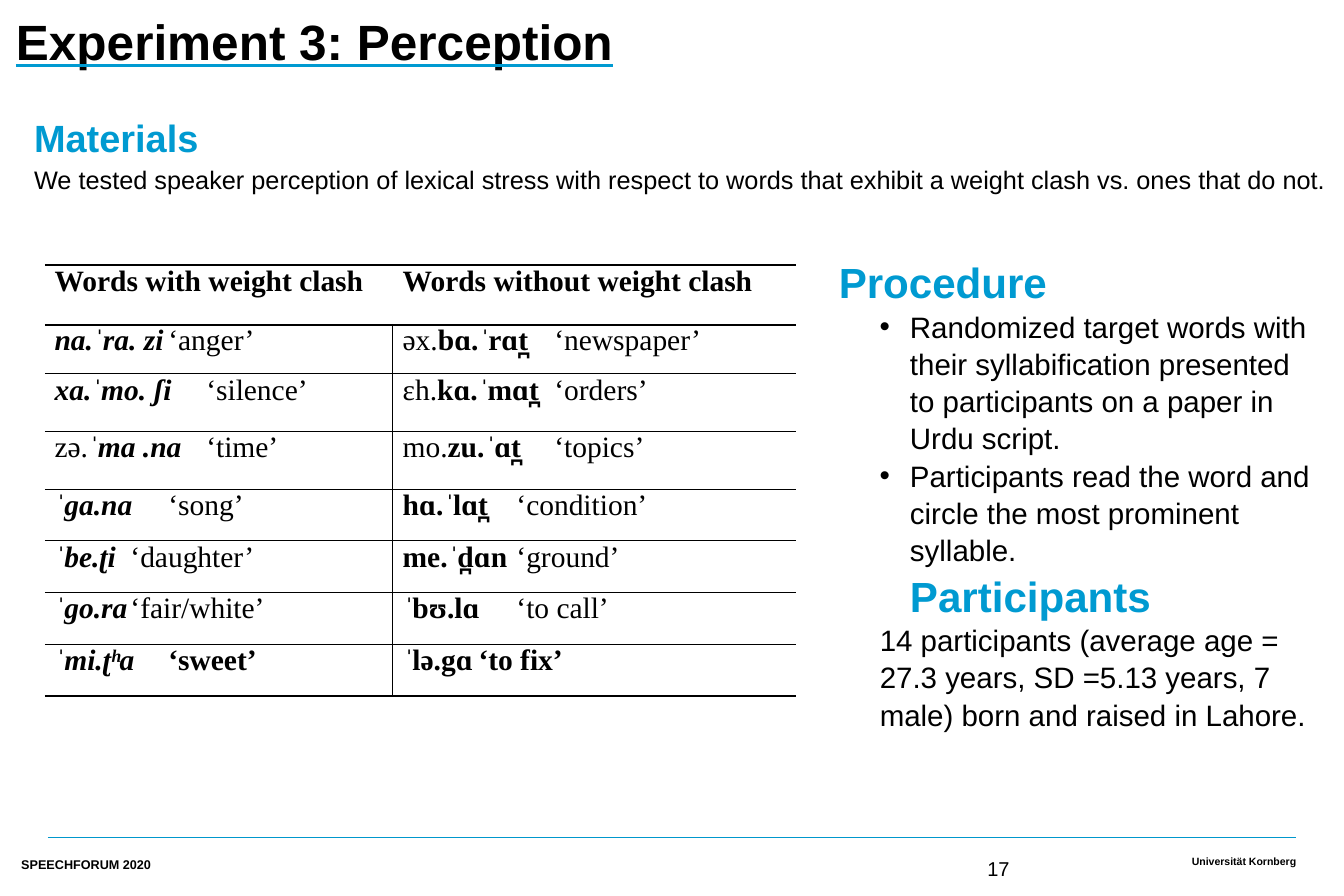
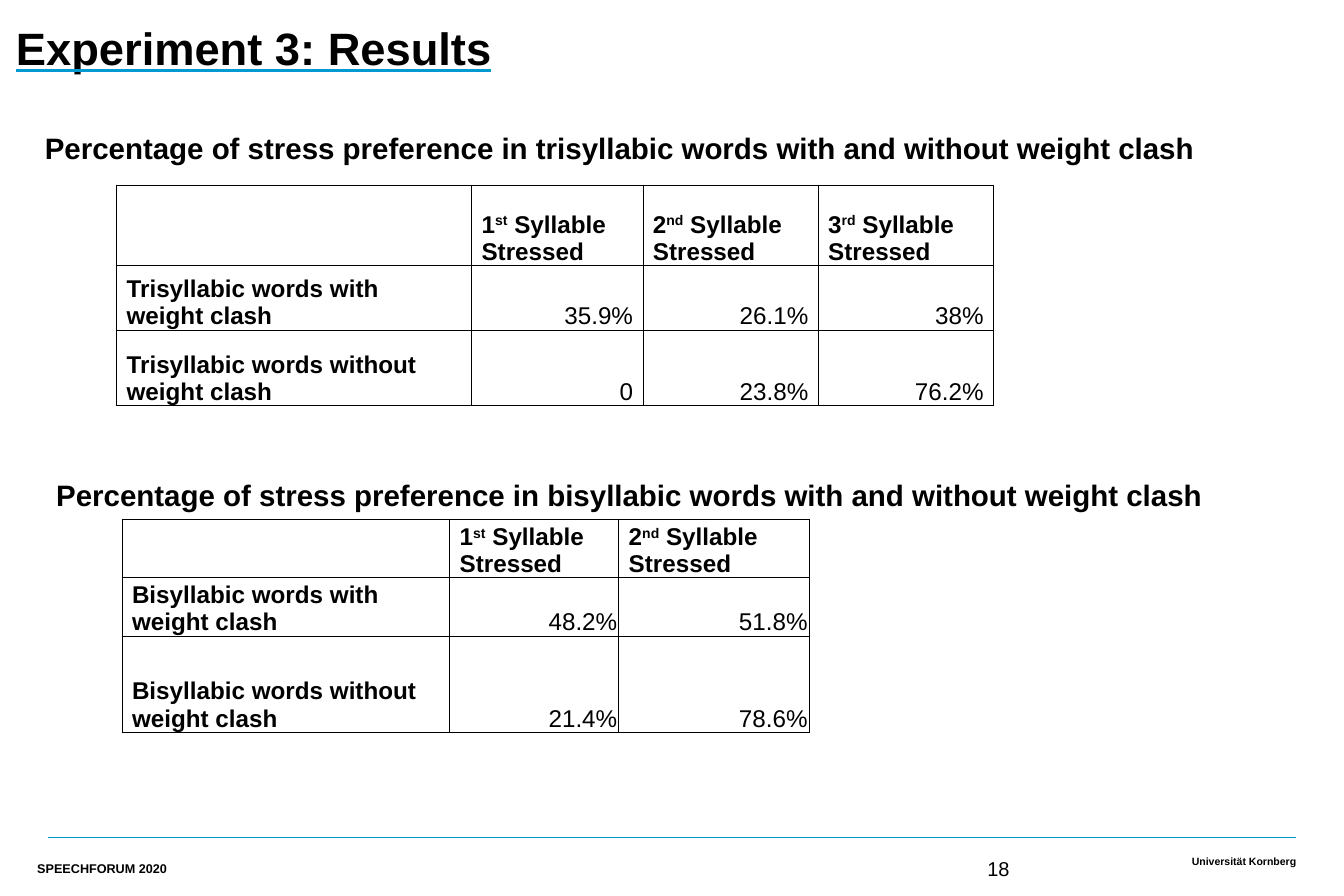
"""Build the perception experiment slides: materials and results."""
from dataclasses import dataclass

from lxml import etree
from pptx import Presentation
from pptx.dml.color import RGBColor
from pptx.enum.shapes import MSO_CONNECTOR
from pptx.enum.text import MSO_ANCHOR, PP_ALIGN
from pptx.oxml.ns import qn
from pptx.util import Inches, Pt

STRAIGHT = MSO_CONNECTOR.STRAIGHT
TOP, BOTTOM = MSO_ANCHOR.TOP, MSO_ANCHOR.BOTTOM
LEFT, RIGHT, JUSTIFY = PP_ALIGN.LEFT, PP_ALIGN.RIGHT, PP_ALIGN.JUSTIFY
BLACK = RGBColor(0x00, 0x00, 0x00)
WHITE = RGBColor(0xFF, 0xFF, 0xFF)
BLUE = RGBColor(0x00, 0x9A, 0xD1)
RULE_BLUE = RGBColor(0x00, 0x97, 0xCC)
SANS, SERIF = "Arial", "Times New Roman"
SLIDE_WIDTH, SLIDE_HEIGHT = Inches(17.72), Inches(11.81)
CELL_MARGIN = 0.13
STRESS = "ˈ"


@dataclass(frozen=True)
class Box:
    """Place on a grid of 100 columns by 100 rows."""
    left: float
    top: float
    width: float
    height: float


@dataclass(frozen=True)
class Run:
    """Stretch of text in one style."""
    text: str
    size: float
    bold: bool = False
    italic: bool = False
    color: RGBColor = BLACK
    font: str = SANS
    raised: bool = False
    underlined: bool = False


@dataclass(frozen=True)
class Paragraph:
    """Runs with their alignment, spacing and indents in grid columns."""
    runs: tuple[Run, ...]
    align: PP_ALIGN = LEFT
    spacing: float = 1.0
    before: float = 0
    indent: float = 0
    hanging: float = 0
    tab: float = 0


@dataclass(frozen=True)
class Cell:
    """Table cell with border widths in points for left, right, top and bottom."""
    paragraph: Paragraph | None
    borders: tuple[float, float, float, float]
    anchor: MSO_ANCHOR = BOTTOM
    margin: float = CELL_MARGIN


@dataclass(frozen=True)
class Word:
    """Transcribed word: unmarked beginning, marked rest and meaning."""
    beginning: str
    marked: str
    meaning: str


@dataclass(frozen=True)
class Results:
    """Stress preferences of one word length, with the table's grid."""
    heading: str
    heading_box: Box
    left: float
    top: float
    columns: tuple[float, ...]
    rows: tuple[float, ...]
    length: str
    values: tuple[tuple[str, ...], ...]
    value_margin: float


CLASH = (
    Word("", "nɑ.ˈrɑ. zi", "‘anger’"), Word("", "xɑ.ˈmo. ʃi", "‘silence’"),
    Word("zə.", "ˈmɑ .nɑ", "‘time’"), Word("", "ˈgɑ.nɑ", "‘song’"),
    Word("", "ˈbe.ʈi", "‘daughter’"), Word("", "ˈgo.rɑ", "‘fair/white’"),
    Word("", "ˈmi.ʈʰɑ", "‘sweet’"),
)
NO_CLASH = (
    Word("əx.", "bɑ.ˈrɑt̪", "‘newspaper’"), Word("ɛh.", "kɑ.ˈmɑt̪", "‘orders’"),
    Word("mo.", "zu.ˈɑt̪", "‘topics’"), Word("", "hɑ.ˈlɑt̪", "‘condition’"),
    Word("", "me.ˈd̪ɑn", "‘ground’"), Word("", "ˈbʊ.lɑ", "‘to call’"),
    Word("", "ˈlə.gɑ", "‘to fix’"),
)
RESULTS = (
    Results("Percentage of stress preference in trisyllabic words with and without weight clash",
            Box(3.33, 14.48, 93.1, 4.23), 8.69, 20.66,
            (26.41, 12.75, 13.04, 13.04), (8.98, 7.2, 8.47), "Trisyllabic",
            (("35.9%", "26.1%", "38%"), ("0", "23.8%", "76.2%")), CELL_MARGIN),
    Results("Percentage of stress preference in bisyllabic words with and without weight clash",
            Box(4.18, 53.26, 93.1, 4.23), 9.09, 58,
            (24.38, 12.58, 14.16), (6.1, 6.1, 10.75), "Bisyllabic",
            (("48.2%", "51.8%"), ("21.4%", "78.6%")), 0.02),
)


def across(columns: float) -> int:
    """Turn grid columns into a length."""
    return round(SLIDE_WIDTH * columns / 100)


def down(rows: float) -> int:
    """Turn grid rows into a length."""
    return round(SLIDE_HEIGHT * rows / 100)


def add_solid_fill(parent, color: RGBColor) -> None:
    """Add a solid fill element."""
    fill = etree.SubElement(parent, qn("a:solidFill"))
    etree.SubElement(fill, qn("a:srgbClr"), val=str(color))


def add_run(paragraph, run: Run) -> None:
    """Append one styled run."""
    text_run = paragraph.add_run()
    text_run.text = run.text
    font = text_run.font
    font.name, font.size = run.font, Pt(run.size)
    font.bold, font.italic = run.bold, run.italic
    font.color.rgb = run.color
    properties = text_run._r.get_or_add_rPr()
    if run.raised:
        properties.set("baseline", "30000")
    if run.underlined:
        font.underline = True
        underline = etree.Element(qn("a:uFill"))
        add_solid_fill(underline, BLUE)
        properties.find(qn("a:latin")).addprevious(underline)


def write_paragraph(paragraph, content: Paragraph) -> None:
    """Fill a paragraph with its runs and layout."""
    paragraph.alignment = content.align
    paragraph.line_spacing = content.spacing
    paragraph.space_before = Pt(content.before)
    properties = paragraph._p.get_or_add_pPr()
    properties.set("marL", str(across(content.indent)))
    properties.set("indent", str(-across(content.hanging)))
    if content.hanging:
        etree.SubElement(properties, qn("a:buFont"), typeface=SANS)
        etree.SubElement(properties, qn("a:buChar"), char="•")
    if content.tab:
        stops = etree.SubElement(properties, qn("a:tabLst"))
        etree.SubElement(stops, qn("a:tab"), pos=str(across(content.tab)), algn="ctr")
    for run in content.runs:
        add_run(paragraph, run)


def add_text(slide, box: Box, *contents: Paragraph, anchor: MSO_ANCHOR = TOP,
             margins: tuple[float, float, float] = (0, 0, 0)) -> None:
    """Add a text box; margins are sides, top and bottom in inches."""
    shape = slide.shapes.add_textbox(across(box.left), down(box.top),
                                     across(box.width), down(box.height))
    frame = shape.text_frame
    frame.word_wrap, frame.vertical_anchor = True, anchor
    sides, above, below = map(Inches, margins)
    frame.margin_left = frame.margin_right = sides
    frame.margin_top, frame.margin_bottom = above, below
    for index, content in enumerate(contents):
        write_paragraph(frame.add_paragraph() if index else frame.paragraphs[0], content)


def write_cell(cell, content: Cell) -> None:
    """Set the borders, fill and text of a table cell."""
    properties = cell._tc.get_or_add_tcPr()
    for side, width in zip("LRTB", content.borders):
        line = etree.SubElement(properties, qn(f"a:ln{side}"), w=str(Pt(width)))
        if width:
            add_solid_fill(line, BLACK)
        else:
            etree.SubElement(line, qn("a:noFill"))
    cell.fill.solid()
    cell.fill.fore_color.rgb = WHITE
    cell.vertical_anchor = content.anchor
    cell.margin_left = cell.margin_right = Inches(content.margin)
    cell.margin_top = cell.margin_bottom = 0
    if content.paragraph:
        write_paragraph(cell.text_frame.paragraphs[0], content.paragraph)


def add_grid(slide, left: float, top: float, columns: tuple[float, ...],
             rows: tuple[float, ...], cells: list[list[Cell]]) -> None:
    """Add a table with the given column widths and row heights."""
    table = slide.shapes.add_table(len(rows), len(columns), across(left), down(top),
                                   across(sum(columns)), down(sum(rows))).table
    table.first_row = table.horz_banding = False
    for column, width in zip(table.columns, columns):
        column.width = across(width)
    for row, height, contents in zip(table.rows, rows, cells):
        row.height = down(height)
        for cell, content in zip(row.cells, contents):
            write_cell(cell, content)


def add_base_slide(presentation, title: Run, title_top: float, number: int, event_box: Box):
    """Add a slide with its title, footer rule and footer texts."""
    slide = presentation.slides.add_slide(presentation.slide_layouts[6])
    rule = slide.shapes.add_connector(STRAIGHT, across(3.56), down(93.48),
                                      across(96.44), down(93.48))
    rule.line.color.rgb, rule.line.width = RULE_BLUE, Pt(1)
    etree.SubElement(rule._element.spPr, qn("a:effectLst"))
    add_text(slide, Box(62.58, 94.16, 33.86, 3.13),
             Paragraph((Run("Universität Kornberg", 10, bold=True),), RIGHT),
             anchor=BOTTOM, margins=(0, 0, 0.06))
    add_text(slide, Box(1.19, title_top, 97.63, 10.5), Paragraph((title,), spacing=0.95))
    add_text(slide, event_box, Paragraph((Run("SPEECHFORUM 2020", 12, bold=True),)),
             anchor=BOTTOM, margins=(0, 0, 0.06))
    add_text(slide, Box(72.91, 95.17, 11.4, 3.56), Paragraph((Run(str(number), 19),)),
             margins=(0.1, 0.05, 0.05))
    return slide


def word_paragraph(word: Word, clash: bool, bold_meaning: bool) -> Paragraph:
    """Set a word with its meaning centred on a tab stop."""
    before, mark, after = word.marked.partition(STRESS)
    parts = ((word.beginning, False, False), (before, True, clash),
             (mark, True, True), (after, True, clash),
             ("\t" + word.meaning, bold_meaning, False))
    runs = tuple(Run(text, 28, bold, italic, font=SERIF)
                 for text, bold, italic in parts if text)
    return Paragraph(runs, tab=18.62 if clash else 19.47)


def add_word_table(slide) -> None:
    """Add the table of words with and without weight clash."""
    headers = ("Words with weight clash", "Words without weight clash")
    cells = [[Cell(Paragraph((Run(text, 28, bold=True, font=SERIF),), JUSTIFY),
                   (0, 0, 2, 2), TOP) for text in headers]]
    for index, pair in enumerate(zip(CLASH, NO_CLASH)):
        last = index == len(CLASH) - 1
        above, below = 1 if index else 2, 2 if last else 1
        cells.append([
            Cell(word_paragraph(word, clash, last),
                 (0 if clash else 1, 1 if clash else 0, above, below), TOP)
            for word, clash in zip(pair, (True, False))])
    rows = (6.69, 5.5) + (6.44,) * 2 + (5.76,) * 4
    add_grid(slide, 3.33, 29.55, (25.9, 29.97), rows, cells)


def add_results(slide, results: Results) -> None:
    """Add a heading and its table of stress preferences."""
    borders = (1, 1, 1, 1)
    add_text(slide, results.heading_box, Paragraph((Run(results.heading, 28, bold=True),)))
    ordinals = (("1", "st"), ("2", "nd"), ("3", "rd"))[:len(results.columns) - 1]
    cells = [[Cell(None, borders)] + [
        Cell(Paragraph((Run(digit, 23, bold=True), Run(ending, 23, bold=True, raised=True),
                        Run(" Syllable Stressed", 23, bold=True))), borders)
        for digit, ending in ordinals]]
    for kind, values in zip(("with", "without"), results.values):
        label = Run(f"{results.length} words {kind} weight clash", 23, bold=True)
        cells.append([Cell(Paragraph((label,)), borders)] + [
            Cell(Paragraph((Run(value, 23),), RIGHT), borders, margin=results.value_margin)
            for value in values])
    add_grid(slide, results.left, results.top, results.columns, results.rows, cells)


def add_perception_slide(presentation) -> None:
    """Add the slide on materials, procedure and participants."""
    slide = add_base_slide(presentation,
                           Run("Experiment 3: Perception", 47, bold=True, underlined=True),
                           1.69, 17, Box(1.58, 95.17, 21.67, 2.71))
    add_text(slide, Box(2.54, 12.28, 97.07, 10.16),
             Paragraph((Run("Materials", 36, bold=True, color=BLUE),), spacing=1.1),
             Paragraph((Run("We tested speaker perception of lexical stress with respect to "
                            "words that exhibit a weight clash vs. ones that do not.", 24),),
                       spacing=1.1, before=1))
    add_word_table(slide)
    steps = ("Randomized target words with their syllabification presented to "
             "participants on a paper in Urdu script.",
             "Participants read the word and circle the most prominent syllable.")
    add_text(slide, Box(61.79, 27.94, 37.02, 51.65),
             Paragraph((Run("Procedure", 40, bold=True, color=BLUE),), spacing=1.05),
             *(Paragraph((Run(step, 28),), spacing=1.05, indent=5.3, hanging=2.26)
               for step in steps),
             Paragraph((Run("Participants", 40, bold=True, color=BLUE),),
                       spacing=1.05, indent=5.3),
             Paragraph((Run("14 participants (average age = 27.3 years, SD =5.13 years, "
                            "7 male) born and raised in Lahore.", 28),),
                       spacing=1.05, indent=3.05),
             margins=(0.11, 0.05, 0.05))


def add_results_slide(presentation) -> None:
    """Add the slide with both result tables."""
    slide = add_base_slide(presentation,
                           Run("Experiment 3: Results", 43, bold=True, underlined=True),
                           2.71, 18, Box(2.77, 95.17, 20.49, 3.13))
    for results in RESULTS:
        add_results(slide, results)


def main() -> None:
    """Build and save the presentation."""
    presentation = Presentation()
    presentation.slide_width, presentation.slide_height = SLIDE_WIDTH, SLIDE_HEIGHT
    add_perception_slide(presentation)
    add_results_slide(presentation)
    presentation.save("out.pptx")


if __name__ == "__main__":
    main()
